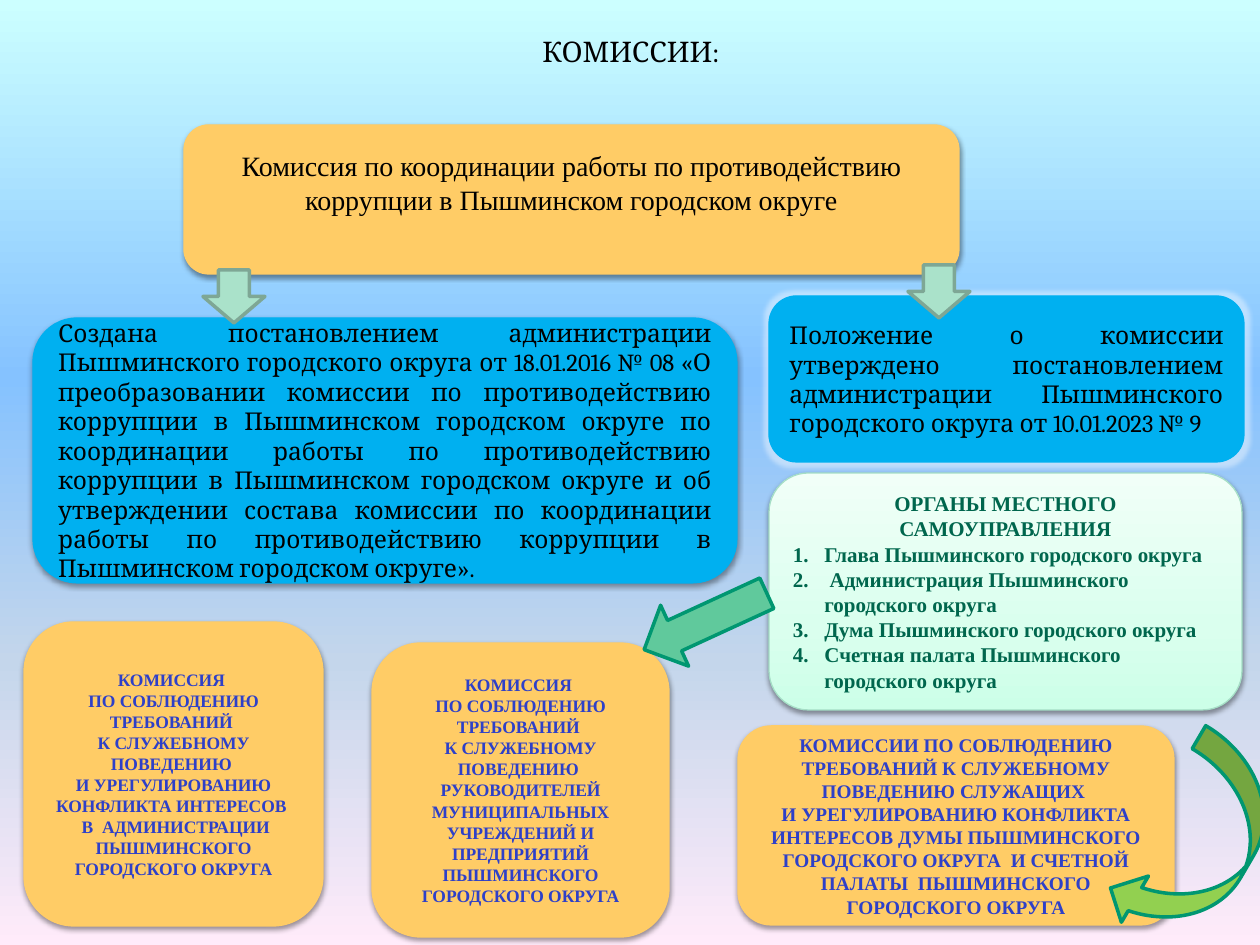
from lxml import etree
from pptx import Presentation
from pptx import util as u
from pptx.dml.color import RGBColor
from pptx.enum import shapes, text
from pptx.oxml.ns import qn

SERIF, ROMAN = "Cambria", "Times New Roman"
SAND, SKY, BLACK, INDIGO, GREEN, TEAL = "FFCC66", "00B0F0", "000000", "2E40C8", "00664D", "009771"
CENTER, JUSTIFY = text.PP_ALIGN.CENTER, text.PP_ALIGN.JUSTIFY
SHAPE = shapes.MSO_SHAPE

TITLE = "КОМИССИИ:"
BACKGROUND = [(0, "CCFFFF"), (40, "85C2FF"), (70, "C4D6EB"), (100, "FFEBFA")]
MINT = [(0, "CCFFE8"), (35, "DAFFEE"), (100, "F1FFF8")]

# Text styles: font, size, colour, bold, alignment
HEAD = (ROMAN, 16, BLACK, False, CENTER)
DECREE = (SERIF, 14, BLACK, False, JUSTIFY)
SMALL = (ROMAN, 10, INDIGO, True, CENTER)
MEDIUM = (ROMAN, 11, INDIGO, True, CENTER)
BODIES = (ROMAN, 12, GREEN, True, CENTER)

# Boxes: place in px, fill, line, style, effect, text
BOXES = [
    ((184, 125, 775, 149), SAND, SAND, HEAD, "shadow",
     "Комиссия по координации работы по противодействию коррупции в\u00a0Пышминском городском округе"),
    ((33, 318, 704, 265), SKY, SKY, DECREE, "shadow",
     "Создана постановлением администрации Пышминского городского округа от 18.01.2016 № 08 "
     "«О преобразовании комиссии по противодействию коррупции в Пышминском городском округе "
     "по координации работы по противодействию коррупции в Пышминском городском округе и об "
     "утверждении состава комиссии по координации работы по противодействию коррупции в "
     "Пышминском городском округе»."),
    ((769, 296, 475, 166), SKY, SKY, DECREE, "glow",
     "Положение о комиссии утверждено постановлением администрации Пышминского "
     "городского округа от 10.01.2023 № 9"),
    ((24, 622, 299, 304), SAND, SAND, SMALL, "shadow",
     "КОМИССИЯ \vПО СОБЛЮДЕНИЮ ТРЕБОВАНИЙ \vК СЛУЖЕБНОМУ ПОВЕДЕНИЮ \vИ УРЕГУЛИРОВАНИЮ "
     "КОНФЛИКТА ИНТЕРЕСОВ \v В  АДМИНИСТРАЦИИ ПЫШМИНСКОГО ГОРОДСКОГО ОКРУГА"),
    ((372, 643, 297, 294), SAND, SAND, SMALL, "shadow",
     "КОМИССИЯ \vПО СОБЛЮДЕНИЮ ТРЕБОВАНИЙ \vК СЛУЖЕБНОМУ ПОВЕДЕНИЮ \vРУКОВОДИТЕЛЕЙ "
     "МУНИЦИПАЛЬНЫХ УЧРЕЖДЕНИЙ И ПРЕДПРИЯТИЙ ПЫШМИНСКОГО ГОРОДСКОГО ОКРУГА"),
    ((769, 473, 473, 237), MINT, "A5DEC6", BODIES, "shadow",
     "ОРГАНЫ МЕСТНОГО САМОУПРАВЛЕНИЯ\n"
     "Глава Пышминского городского округа\n"
     " Администрация Пышминского городского округа\n"
     "Дума Пышминского городского округа\n"
     "Счетная палата Пышминского городского округа"),
    ((738, 726, 436, 199), SAND, SAND, MEDIUM, "shadow",
     "КОМИССИИ ПО СОБЛЮДЕНИЮ ТРЕБОВАНИЙ К СЛУЖЕБНОМУ ПОВЕДЕНИЮ СЛУЖАЩИХ \vИ УРЕГУЛИРОВАНИЮ "
     "КОНФЛИКТА ИНТЕРЕСОВ ДУМЫ ПЫШМИНСКОГО ГОРОДСКОГО ОКРУГА  И СЧЕТНОЙ ПАЛАТЫ  "
     "ПЫШМИНСКОГО ГОРОДСКОГО ОКРУГА"),
]

# Arrows: preset, place in px, rotation, fill, line
ARROWS = [
    (SHAPE.CURVED_LEFT_ARROW, (1144, 738, 107, 215), 30.4, "92D050", TEAL),
    (SHAPE.DOWN_ARROW, (203, 270, 62, 53), 0, "AAE2CA", "7EA795"),
    (SHAPE.DOWN_ARROW, (908, 265, 62, 53), 0, "AAE2CA", "7EA795"),
    (SHAPE.LEFT_ARROW, (638, 588, 135, 67), 335.3, "60C99C", TEAL),
]


def px(value):
    return u.Emu(round(value * 914400 / 126))


def rgb(code):
    return RGBColor.from_string(code)


def add_color(parent, code, alpha=None):
    color = etree.SubElement(parent, qn("a:srgbClr"), val=code)
    if alpha is not None:
        etree.SubElement(color, qn("a:alpha"), val=str(alpha * 1000))


def set_gradient(fill, element, stops, angle):
    fill.gradient()
    fill.gradient_angle = angle
    stop_list = element.xpath(".//a:gsLst")[0]
    for stop in list(stop_list):
        stop_list.remove(stop)
    for percent, code in stops:
        add_color(etree.SubElement(stop_list, qn("a:gs"), pos=str(percent * 1000)), code)


def add_shape(page, preset, place, fill, line, width):
    shape = page.shapes.add_shape(preset, *map(px, place))
    shape.shadow.inherit = False
    if isinstance(fill, list):
        set_gradient(shape.fill, shape.element, fill, 90)
    else:
        shape.fill.solid()
        shape.fill.fore_color.rgb = rgb(fill)
    shape.line.color.rgb = rgb(line)
    shape.line.width = u.Pt(width)
    return shape


def add_effect(shape, effect):
    effects = shape.element.spPr.find(qn("a:effectLst"))
    if effect == "shadow":
        shadow = etree.SubElement(effects, qn("a:outerShdw"), blurRad=str(u.Pt(3.1)),
                                  dist=str(u.Pt(1.6)), dir="5400000", rotWithShape="0")
        add_color(shadow, BLACK, 38)
    else:
        add_color(etree.SubElement(effects, qn("a:glow"), rad=str(u.Pt(5))), "FFFFFF", 40)


def format_text(frame, style):
    font, size, color, bold, align = style
    frame.word_wrap = True
    frame.vertical_anchor = text.MSO_ANCHOR.MIDDLE
    for para in frame.paragraphs:
        para.alignment = align
        for span in para.runs:
            span.font.name = font
            span.font.size = u.Pt(size)
            span.font.bold = bold
            span.font.color.rgb = rgb(color)


def number(para):
    para.alignment = text.PP_ALIGN.LEFT
    props = para._p.get_or_add_pPr()
    props.set("marL", str(u.Inches(0.25)))
    props.set("indent", str(-u.Inches(0.25)))
    etree.SubElement(props, qn("a:buAutoNum"), type="arabicPeriod")


def main():
    deck = Presentation()
    deck.slide_width, deck.slide_height = px(1260), px(945)
    page = deck.slides.add_slide(deck.slide_layouts[5])
    set_gradient(page.background.fill, page.element, BACKGROUND, 270)

    # Title
    title = page.shapes.title
    title.left, title.top, title.width, title.height = map(px, (64, 16, 1134, 70))
    title.text_frame.text = TITLE
    title.text_frame.auto_size = text.MSO_AUTO_SIZE.NONE
    format_text(title.text_frame, (SERIF, 16.2, BLACK, False, CENTER))

    # Boxes
    for place, fill, line, style, effect, words in BOXES:
        box = add_shape(page, SHAPE.ROUNDED_RECTANGLE, place, fill, line, 0.75)
        add_effect(box, effect)
        box.text_frame.text = words
        format_text(box.text_frame, style)
        if style is HEAD:
            box.text_frame.margin_bottom = px(41)
        for para in box.text_frame.paragraphs[1:]:
            number(para)

    # Arrows
    for preset, place, rotation, fill, line in ARROWS:
        add_shape(page, preset, place, fill, line, 2).rotation = rotation

    deck.save("out.pptx")


if __name__ == "__main__":
    main()
